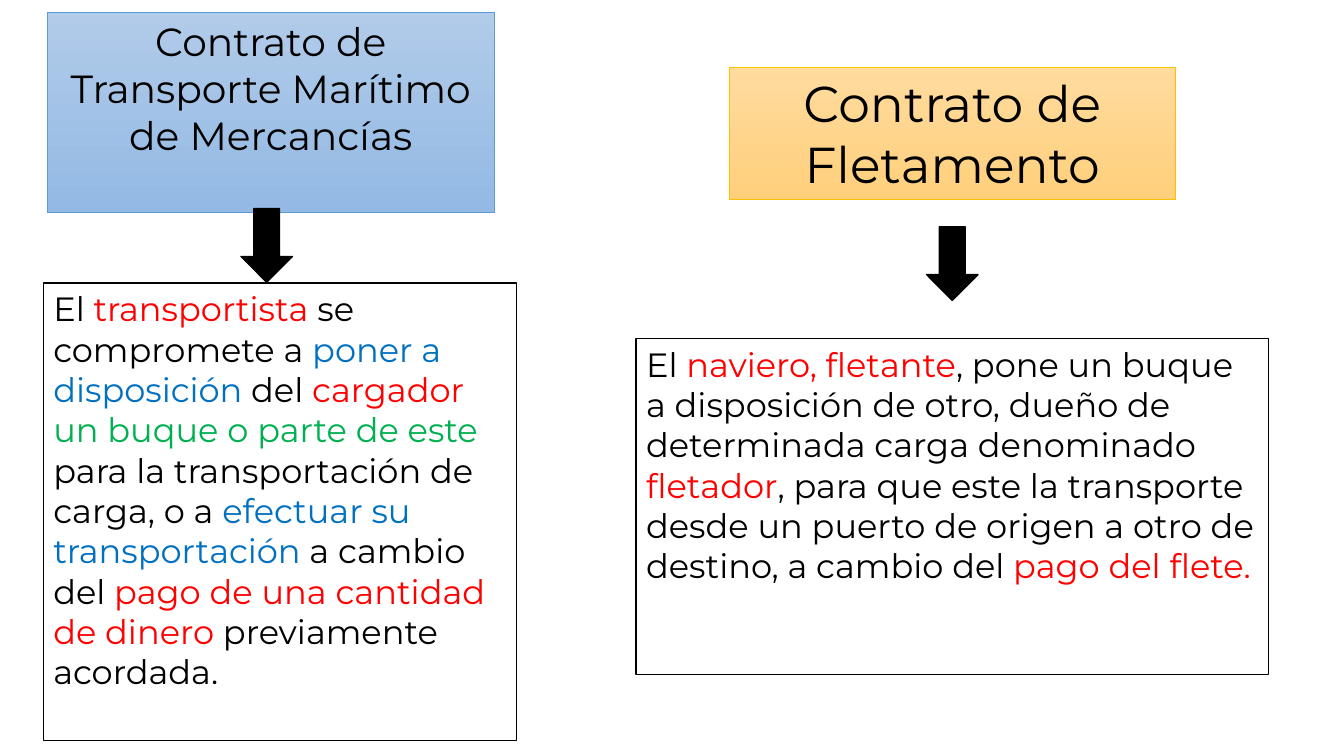
from pptx import Presentation
from pptx.dml.color import RGBColor
from pptx.enum.shapes import MSO_SHAPE
from pptx.enum.text import MSO_ANCHOR, PP_ALIGN
from pptx.util import Inches, Pt

RECT, ARROW = MSO_SHAPE.RECTANGLE, MSO_SHAPE.DOWN_ARROW
TOP, CENTER, LEFT = MSO_ANCHOR.TOP, PP_ALIGN.CENTER, PP_ALIGN.LEFT
FONT = "Montserrat"
BLACK, WHITE, RED, BLUE, GREEN = "000000", "FFFFFF", "FF0000", "0070C0", "00B050"

# Content: heading, arrow position and definition of each contract
CONTRACTS = [
    {
        "heading": "Contrato de Transporte Marítimo de Mercancías",
        "heading_at": (0.47, 0.12, 4.43, 1.99),
        "heading_size": 28,
        "gradient": ("B1CBE9", "93B9E4"),
        "border": "5B9BD5",
        "arrow_at": (2.39, 2.07),
        "definition_at": (0.43, 2.81, 4.69, 4.54),
        "definition": [
            ("El ", BLACK),
            ("transportista", RED),
            (" se compromete a ", BLACK),
            ("poner a disposición", BLUE),
            (" del ", BLACK),
            ("cargador ", RED),
            ("un buque o parte de este", GREEN),
            (" para la transportación de carga, o a ", BLACK),
            ("efectuar su transportación ", BLUE),
            ("a cambio del ", BLACK),
            ("pago de una cantidad de dinero ", RED),
            ("previamente acordada.", BLACK),
        ],
    },
    {
        "heading": "Contrato de Fletamento",
        "heading_at": (7.23, 0.67, 4.43, 1.31),
        "heading_size": 36,
        "gradient": ("FFDB9E", "FFD07C"),
        "border": "FFC000",
        "arrow_at": (9.19, 2.25),
        "definition_at": (6.31, 3.36, 6.27, 3.33),
        "definition": [
            ("El ", BLACK),
            ("naviero, fletante", RED),
            (", pone un buque a disposición de otro, dueño de determinada carga denominado ", BLACK),
            ("fletador", RED),
            (", para que este la transporte desde un puerto de origen a otro de destino, "
             "a cambio del ", BLACK),
            ("pago del flete.", RED),
        ],
    },
]
ARROW_SIZE = (0.51, 0.73)
DEFINITION_SIZE = 24


def color(hex_value):
    return RGBColor.from_string(hex_value)


def add_block(page, kind, place, fill, border, border_width=1):
    """Add a shape; a pair of fill colours gives a top-to-bottom gradient."""
    block = page.shapes.add_shape(kind, *map(Inches, place))
    block.shadow.inherit = False
    if isinstance(fill, tuple):
        block.fill.gradient()
        block.fill.gradient_angle = 270
        for stop, shade in zip(block.fill.gradient_stops, fill):
            stop.color.rgb = color(shade)
    else:
        block.fill.solid()
        block.fill.fore_color.rgb = color(fill)
    block.line.color.rgb = color(border)
    block.line.width = Pt(border_width)
    return block


def write(block, spans, size, alignment):
    frame = block.text_frame
    for name, value in {"word_wrap": True, "vertical_anchor": TOP}.items():
        setattr(frame, name, value)
    para = frame.paragraphs[0]
    para.alignment = alignment
    for text, shade in spans:
        span = para.add_run()
        span.text = text
        for name, value in {"name": FONT, "size": Pt(size)}.items():
            setattr(span.font, name, value)
        span.font.color.rgb = color(shade)


def main():
    deck = Presentation()
    deck.slide_width, deck.slide_height = Inches(13.33), Inches(7.5)
    page = deck.slides.add_slide(deck.slide_layouts[6])

    for contract in CONTRACTS:
        # Heading
        heading = add_block(page, RECT, contract["heading_at"],
                            contract["gradient"], contract["border"], 0.5)
        write(heading, [(contract["heading"], BLACK)], contract["heading_size"], CENTER)
        # Definition
        definition = add_block(page, RECT, contract["definition_at"], WHITE, BLACK)
        write(definition, contract["definition"], DEFINITION_SIZE, LEFT)
        # Arrow from heading to definition
        add_block(page, ARROW, contract["arrow_at"] + ARROW_SIZE, BLACK, BLACK)

    deck.save("out.pptx")


if __name__ == "__main__":
    main()
